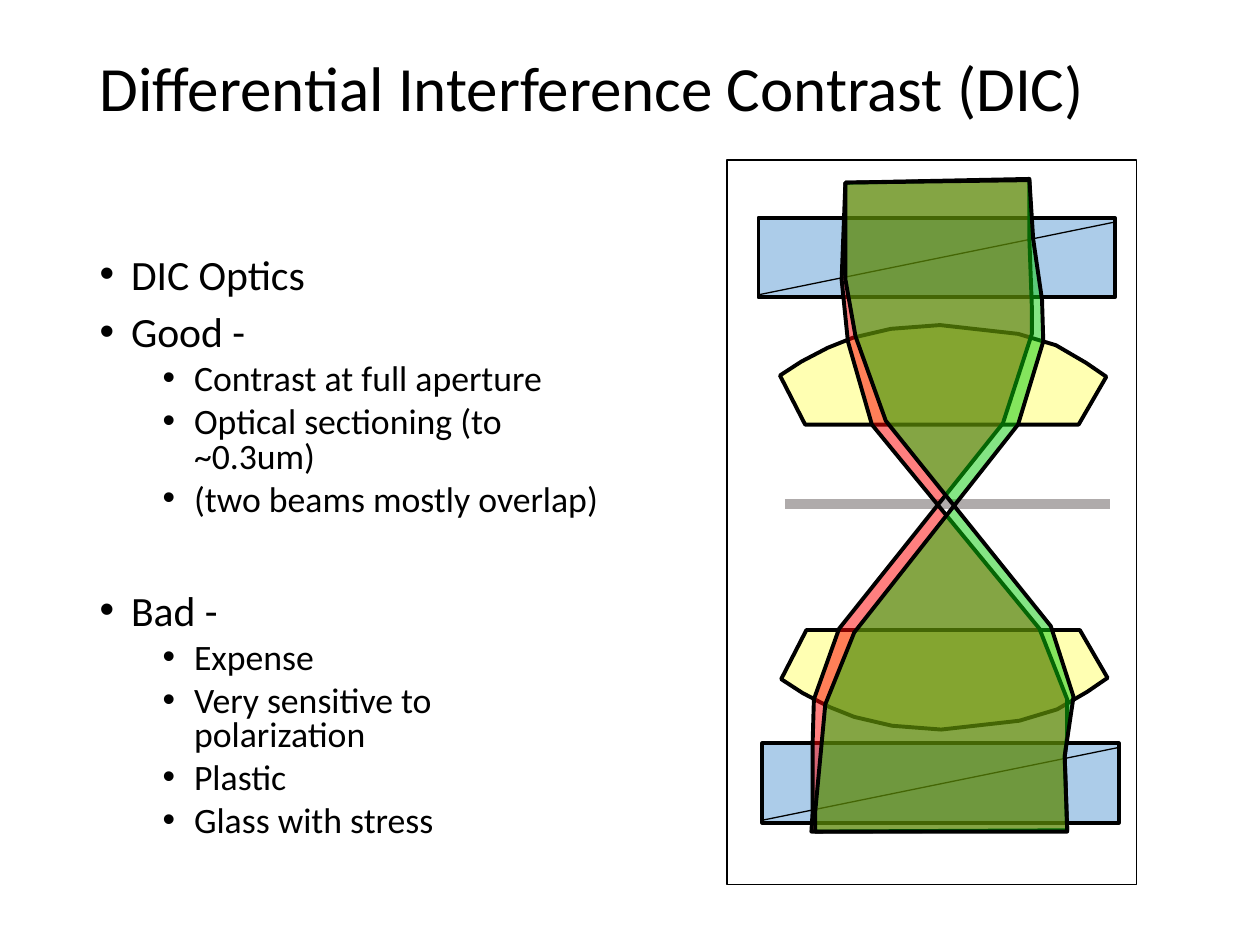
from lxml import etree
from pptx import Presentation
from pptx import util as u
from pptx.dml.color import RGBColor
from pptx.enum import shapes, text
from pptx.oxml.ns import qn

BLACK, WHITE, GLASS, LENS, SPECIMEN = "000000", "FFFFFF", "5B9BD5", "FFFF66", "AFABAB"
UNIT = u.Inches(0.01)

POINTS = [
    ("DIC Optics", ()),
    ("Good -", ("Contrast at full aperture", "Optical sectioning (to ~0.3um)",
                "(two beams mostly overlap)")),
    ("Bad -", ("Expense", "Very sensitive to polarization", "Plastic", "Glass with stress")),
]
LENS_PROFILE = [(20, 0), (237, 0), (259, 38), (243, 49), (219, 63), (189, 72),
                (127, 79), (88, 76), (58, 69), (38, 61), (17, 50), (0, 39)]
BEAMS = {
    "FF0000": [(91, 95), (96, 144), (115, 210), (248, 372), (270, 428), (270, 457), (268, 474),
               (270, 532), (67, 533), (68, 517), (68, 462), (69, 428), (89, 372), (219, 209),
               (242, 138), (242, 117), (240, 63), (240, 15), (94, 18)],
    "0ACC0A": [(250, 111), (251, 144), (231, 210), (101, 375), (78, 432), (75, 464), (70, 517),
               (70, 533), (270, 533), (268, 473), (275, 426), (257, 370), (126, 207), (102, 140),
               (94, 95), (94, 18), (240, 16), (243, 63)],
}


def rgb(value):
    """Turn a hex string into a colour."""
    return RGBColor.from_string(value)


def place(item, box):
    """Set a placeholder's box, given in inches."""
    item.left, item.top, item.width, item.height = (u.Inches(side) for side in box)
    frame = item.text_frame
    frame.word_wrap = True
    frame.auto_size = text.MSO_AUTO_SIZE.NONE
    frame.vertical_anchor = text.MSO_ANCHOR.TOP
    return frame


def style(para, size, spacing):
    """Format one paragraph."""
    para.font.name, para.font.size = "Calibri", u.Pt(size)
    para.font.color.rgb = rgb(BLACK)
    para.line_spacing = spacing
    para.alignment = text.PP_ALIGN.LEFT


def add_title(page, box):
    """Write the slide title."""
    para = place(page.shapes.title, box).paragraphs[0]
    para.text = "Differential Interference Contrast (DIC)"
    style(para, 36, 0.9)


def add_bullet(para, wording, level, before):
    """Write one bulleted paragraph."""
    para.text, para.level = wording, level
    style(para, 20.4 if level else 23.8, 0.8)
    para.space_before = u.Pt(before)
    props = para._p.get_or_add_pPr()
    props.set("marL", str(u.Inches(0.25 + 0.5 * level)))
    props.set("indent", str(-u.Inches(0.25)))
    etree.SubElement(props, qn("a:buFont")).set("typeface", "Arial")
    etree.SubElement(props, qn("a:buChar")).set("char", "•")
    default = props.find(qn("a:defRPr"))
    if default is not None:
        props.append(default)


def add_points(page, box):
    """Fill the body placeholder with the two-level list."""
    frame = place(page.placeholders[1], box)
    para = frame.paragraphs[0]
    for number, (heading, details) in enumerate(POINTS):
        if number:
            para = frame.add_paragraph()
        add_bullet(para, heading, 0, 43 if heading == "Bad -" else 10)
        for detail in details:
            add_bullet(frame.add_paragraph(), detail, 1, 5)


def paint(shape, fill, width=2.25):
    """Give a shape a half-transparent fill and a black outline."""
    shape.shadow.inherit = False
    shape.fill.solid()
    shape.fill.fore_color.rgb = rgb(fill)
    colour = shape._element.spPr.find(qn("a:solidFill"))[0]
    etree.SubElement(colour, qn("a:alpha")).set("val", "50000")
    shape.line.color.rgb = rgb(BLACK)
    shape.line.width = u.Pt(width)


def add_box(group, left, top, width, height, fill, line_width=2.25):
    """Draw a rectangle."""
    sides = (u.Emu(side) for side in (left, top, width, height))
    paint(group.shapes.add_shape(shapes.MSO_SHAPE.RECTANGLE, *sides), fill, line_width)


def add_line(group, start, end, colour, width):
    """Draw a straight line."""
    line = group.shapes.add_connector(shapes.MSO_CONNECTOR.STRAIGHT, *start, *end)
    line.line.color.rgb = rgb(colour)
    line.line.width = u.Pt(width)
    etree.SubElement(line._element.spPr, qn("a:effectLst"))


def add_outline(group, left, top, points, fill):
    """Draw a closed polygon from points in hundredths of an inch."""
    builder = group.shapes.build_freeform(*points[0], scale=float(UNIT))
    builder.add_line_segments(points[1:], close=True)
    paint(builder.convert_to_shape(left, top), fill)


def add_prism(group, left, top):
    """Draw a prism with its diagonal joint."""
    add_box(group, left, top, 283 * UNIT, 63 * UNIT, GLASS)
    add_line(group, (left, top + 61 * UNIT), (left + 284 * UNIT, top + 3 * UNIT), BLACK, 0.75)


def add_lens(group, left, flat, direction):
    """Draw a lens that bulges up (-1) or down (1) from its flat side."""
    profile = [(across, direction * depth) for across, depth in LENS_PROFILE]
    add_outline(group, left, flat, profile, LENS)


def add_light_path(page, box):
    """Draw the microscope light path inside its frame."""
    left, top, width, height = (u.Inches(side) for side in box)
    group = page.shapes.add_group_shape()
    add_box(group, left, top, width, height, WHITE, 0.75)
    add_prism(group, left + 25 * UNIT, top + 46 * UNIT)
    add_prism(group, left + 28 * UNIT, top + 463 * UNIT)
    add_lens(group, left + 43 * UNIT, top + 373 * UNIT, 1)
    add_lens(group, left + 42 * UNIT, top + 210 * UNIT, -1)
    stage = top + 273 * UNIT
    add_line(group, (left + 46 * UNIT, stage), (left + 304 * UNIT, stage), SPECIMEN, 6)
    for colour, points in BEAMS.items():
        add_outline(group, left, top, points, colour)


def main():
    """Build the slide and save it."""
    deck = Presentation()
    deck.slide_width, deck.slide_height = u.Inches(10), u.Inches(7.5)
    page = deck.slides.add_slide(deck.slide_layouts[1])
    add_title(page, (0.69, 0.4, 8.62, 1.45))
    add_points(page, (0.69, 2, 4.25, 4.76))
    add_light_path(page, (5.77, 1.27, 3.25, 5.75))
    deck.save("out.pptx")


if __name__ == "__main__":
    main()
